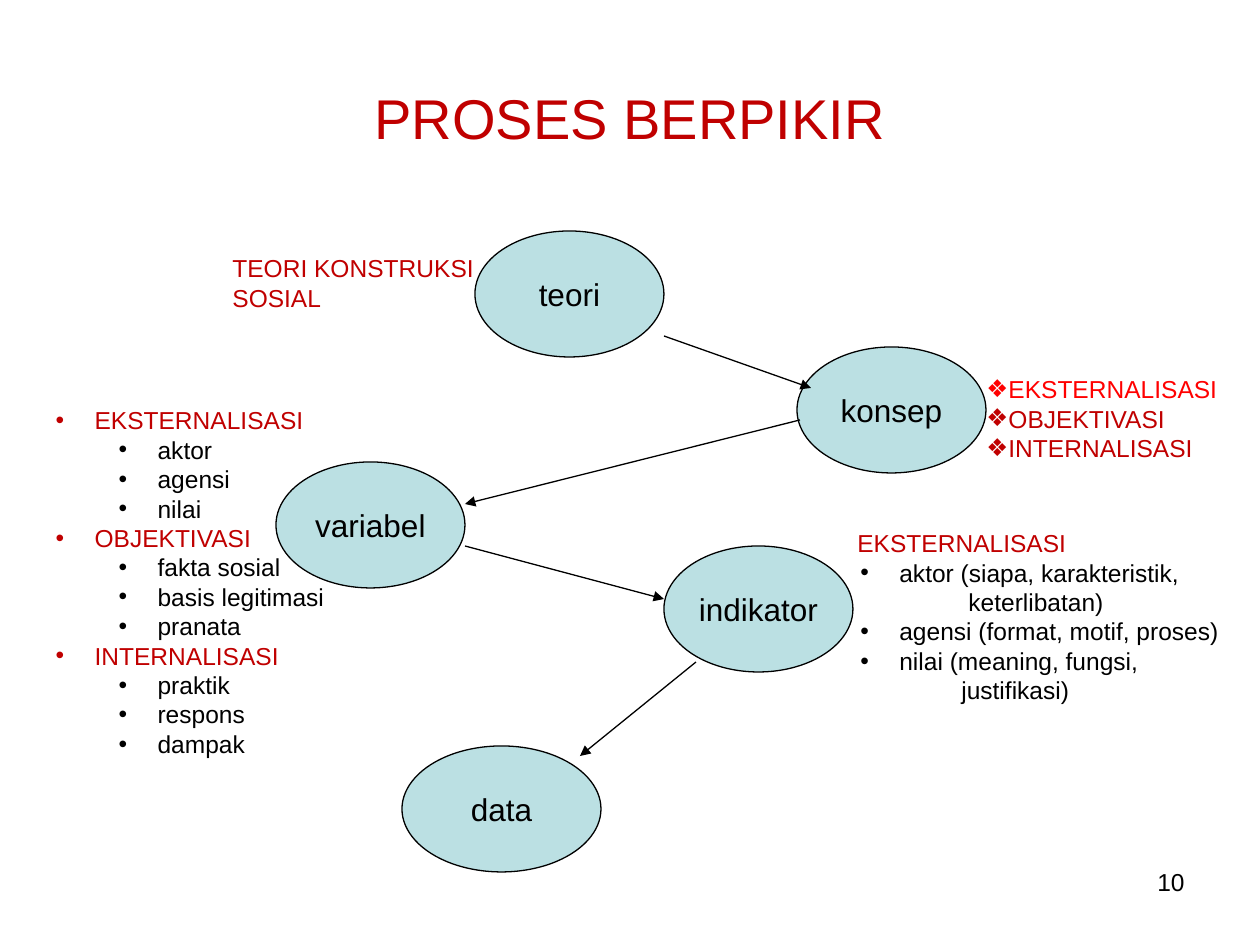
from dataclasses import dataclass
from lxml.etree import SubElement
from pptx import Presentation
from pptx.dml.color import RGBColor as Rgb
from pptx.enum.shapes import MSO_CONNECTOR as Connector, MSO_SHAPE as Shape
from pptx.enum.text import MSO_ANCHOR as Anchor, MSO_AUTO_SIZE as AutoSize, PP_ALIGN as Align
from pptx.oxml.ns import qn
from pptx.util import Pt


@dataclass(frozen=True)
class Theme:
    font: str = "Arial"
    ink: Rgb = Rgb(0x00, 0x00, 0x00)
    accent: Rgb = Rgb(0xC0, 0x00, 0x00)
    bright: Rgb = Rgb(0xFF, 0x00, 0x00)
    node: Rgb = Rgb(0xBB, 0xE0, 0xE3)
    title_size: int = 32
    node_size: int = 18
    note_size: int = 14
    line: float = 0.75


theme = Theme()
SCALE = 914400 / 126


def px(*lengths):
    return [round(length * SCALE) for length in lengths]


def write(frame, lines, size=theme.note_size, align=Align.LEFT):
    for index, (text, color, level, margin, hang, bullet) in enumerate(lines):
        para = frame.paragraphs[0] if index == 0 else frame.add_paragraph()
        para.text = text
        para.level = level
        para.alignment = align
        para.space_before = Pt(0)
        para.font.name = theme.font
        para.font.size = Pt(size)
        para.font.color.rgb = color
        props = para._p.get_or_add_pPr()
        left, indent = px(margin, -hang)
        props.set("marL", str(left))
        props.set("indent", str(indent))
        if bullet:
            SubElement(props, qn("a:buFont")).set("typeface", theme.font)
            SubElement(props, qn("a:buChar")).set("char", bullet)


deck = Presentation()
deck.slide_width, deck.slide_height = px(1260, 945)
page = deck.slides.add_slide(deck.slide_layouts[1])

title = page.shapes.title
title.left, title.top, title.width, title.height = px(63, 38, 1134, 158)
title.text_frame.vertical_anchor = Anchor.MIDDLE
write(title.text_frame, [("PROSES BERPIKIR", theme.accent, 0, 0, 0, None)],
      theme.title_size, Align.CENTER)

variables = {
    "EKSTERNALISASI": ["aktor", "agensi", "nilai"],
    "OBJEKTIVASI": ["fakta sosial", "basis legitimasi", "pranata"],
    "INTERNALISASI": ["praktik", "respons", "dampak"],
}
variable_lines = []
for concept, items in variables.items():
    variable_lines.append((concept, theme.accent, 0, 39, 39, "•"))
    variable_lines += [(item, theme.ink, 1, 102, 39, "•") for item in items]

body = page.placeholders[1]
body.left, body.top, body.width, body.height = px(43, 399, 630, 369)
body.text_frame.auto_size = AutoSize.NONE
write(body.text_frame, variable_lines)

nodes = [
    ("teori", 475, 231, 189),
    ("variabel", 276, 462, 189),
    ("indikator", 664, 546, 189),
    ("data", 402, 746, 199),
    ("konsep", 797, 347, 189),
]
for name, left, top, width in nodes:
    node = page.shapes.add_shape(Shape.OVAL, *px(left, top, width, 126))
    node.shadow.inherit = False
    node.fill.solid()
    node.fill.fore_color.rgb = theme.node
    node.line.color.rgb = theme.ink
    node.line.width = Pt(theme.line)
    node.text_frame.word_wrap = False
    node.text_frame.vertical_anchor = Anchor.MIDDLE
    write(node.text_frame, [(name, theme.ink, 0, 0, 0, None)], theme.node_size, Align.CENTER)

arrows = [
    (664, 336, 811, 388),
    (800, 420, 465, 504),
    (465, 546, 664, 599),
    (696, 662, 580, 756),
]
for ends in arrows:
    arrow = page.shapes.add_connector(Connector.STRAIGHT, *px(*ends))
    arrow.line.color.rgb = theme.ink
    arrow.line.width = Pt(theme.line)
    SubElement(arrow.line._get_or_add_ln(), qn("a:tailEnd")).set("type", "triangle")
    SubElement(arrow._element.spPr, qn("a:effectLst"))

notes = [
    ((974, 368, 399, 66), Align.LEFT, [
        ("EKSTERNALISASI", theme.bright, 0, 0, 0, "❖"),
        ("OBJEKTIVASI", theme.accent, 0, 0, 0, "❖"),
        ("INTERNALISASI", theme.accent, 0, 0, 0, "❖"),
    ]),
    ((903, 861, 294, 66), Align.RIGHT, [("10", theme.ink, 0, 0, 0, None)]),
    ((220, 247, 399, 66), Align.LEFT, [
        ("TEORI KONSTRUKSI", theme.accent, 0, 0, 0, None),
        ("SOSIAL", theme.accent, 0, 0, 0, None),
    ]),
    ((785, 522, 630, 190), Align.LEFT, [
        ("EKSTERNALISASI", theme.accent, 0, 60, 0, None),
        ("aktor (siapa, karakteristik,", theme.ink, 1, 102, 39, "•"),
        ("keterlibatan)", theme.ink, 1, 171, 0, None),
        ("agensi (format, motif, proses)", theme.ink, 1, 102, 39, "•"),
        ("nilai (meaning, fungsi,", theme.ink, 1, 102, 39, "•"),
        ("justifikasi)", theme.ink, 1, 164, 0, None),
    ]),
]
for place, align, lines in notes:
    box = page.shapes.add_textbox(*px(*place))
    box.text_frame.word_wrap = True
    write(box.text_frame, lines, align=align)

deck.save("out.pptx")
